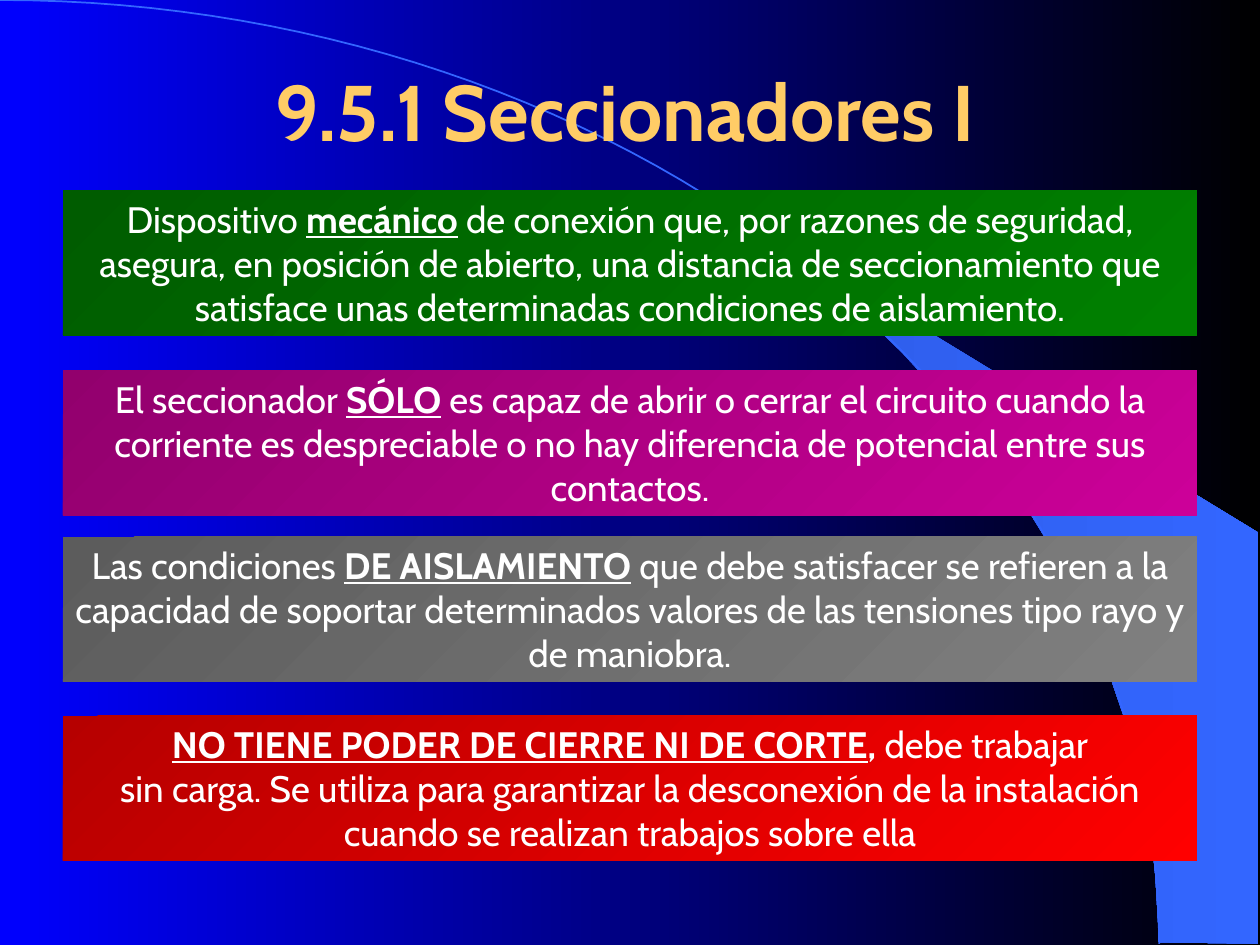
import math
from pptx import Presentation
from pptx.dml.color import RGBColor
from pptx.enum.text import MSO_ANCHOR, MSO_AUTO_SIZE, PP_ALIGN
from pptx.enum.shapes import MSO_SHAPE
from pptx.util import Inches, Pt

RECTANGLE = MSO_SHAPE.RECTANGLE
CENTER = PP_ALIGN.CENTER
TOP, MIDDLE = MSO_ANCHOR.TOP, MSO_ANCHOR.MIDDLE
FIT_SHAPE, NO_FIT = MSO_AUTO_SIZE.SHAPE_TO_FIT_TEXT, MSO_AUTO_SIZE.NONE

FONT = "Cabin"
WHITE = RGBColor(0xFF, 0xFF, 0xFF)
BLACK = RGBColor(0x00, 0x00, 0x00)
BLUE = RGBColor(0x00, 0x00, 0xFF)
SKY = RGBColor(0x33, 0x66, 0xFF)
SKY_DARK = RGBColor(0x2E, 0x5D, 0xE7)
GOLD = RGBColor(0xFF, 0xCC, 0x66)
GREEN_DARK, GREEN = RGBColor(0x00, 0x5C, 0x00), RGBColor(0x00, 0x80, 0x00)
PURPLE_DARK, PURPLE = RGBColor(0x92, 0x00, 0x6D), RGBColor(0xCC, 0x00, 0x99)
GRAY_DARK, GRAY = RGBColor(0x5C, 0x5C, 0x5C), RGBColor(0x80, 0x80, 0x80)
RED_DARK, RED = RGBColor(0xB6, 0x00, 0x00), RGBColor(0xFF, 0x00, 0x00)


def set_gradient(fill, start, end, angle=0):
    fill.gradient()
    fill.gradient_angle = angle
    for stop, color in zip(fill.gradient_stops, (start, end)):
        stop.color.rgb = color


def add_outline(shapes, points, close):
    pts = [(Inches(x), Inches(y)) for x, y in points]
    builder = shapes.build_freeform(*pts[0])
    builder.add_line_segments(pts[1:], close=close)
    sp = builder.convert_to_shape()
    sp.shadow.inherit = False
    return sp


prs = Presentation()
prs.slide_width, prs.slide_height = Inches(10), Inches(7.5)
s = prs.slides.add_slide(prs.slide_layouts[5])
set_gradient(s.background.fill, BLUE, BLACK)

# Blue band in the lower right corner
BAND = [
    (9.2, 7.48), (9.99, 7.49), (9.99, 4.23), (5.89, 1.73), (6.24, 1.99),
    (6.53, 2.22), (6.85, 2.5), (7.16, 2.8), (7.62, 3.3), (8.03, 3.84),
    (8.32, 4.31), (8.58, 4.79), (8.78, 5.28), (8.93, 5.72), (9.03, 6.09),
    (9.13, 6.56), (9.17, 6.96),
]
band = add_outline(s.shapes, BAND, close=True)
set_gradient(band.fill, SKY_DARK, SKY)
band.line.fill.background()

# Thin quarter-ellipse arc
ARC_W, ARC_H, STEPS = 9.2, 7.49, 60
angles = [math.pi / 2 * i / STEPS for i in range(STEPS + 1)]
arc = add_outline(
    s.shapes,
    [(ARC_W * math.sin(a), ARC_H * (1 - math.cos(a))) for a in angles],
    close=False)
arc.fill.background()
arc.line.color.rgb = SKY
arc.line.width = Pt(1)

# Title, in front of the decoration
title = s.shapes.title
s.shapes._spTree.append(title._element)
title.left, title.top = Inches(0.17), Inches(0.25)
title.width, title.height = Inches(9.58), Inches(1.25)
tf = title.text_frame
tf.text = "9.5.1 Seccionadores I"
tf.vertical_anchor = MIDDLE
tf.auto_size = NO_FIT
p = tf.paragraphs[0]
p.alignment = CENTER
font = p.runs[0].font
font.name, font.size, font.bold = FONT, Pt(45), True
font.color.rgb = GOLD

# Statement boxes: top, gradient, paragraphs of (text, bold, underline)
BOXES = [
    (1.51, GREEN_DARK, GREEN, [[
        ("Dispositivo ", False, False),
        ("mecánico", True, True),
        (" de conexión que, por razones de seguridad, asegura, en posición "
         "de abierto, una distancia de seccionamiento que satisface unas "
         "determinadas condiciones de aislamiento.", False, False)]]),
    (2.94, PURPLE_DARK, PURPLE, [[
        ("El seccionador ", False, False),
        ("SÓLO", True, True),
        (" es capaz de abrir o cerrar el circuito cuando la corriente es "
         "despreciable o no hay diferencia de potencial entre sus "
         "contactos.", False, False)]]),
    (4.26, GRAY_DARK, GRAY, [[
        ("Las condiciones ", False, False),
        ("DE AISLAMIENTO", True, True),
        (" que debe satisfacer se refieren a la capacidad de soportar "
         "determinados valores de las tensiones tipo rayo y de maniobra.",
         False, False)]]),
    (5.68, RED_DARK, RED, [
        [("NO TIENE PODER DE CIERRE NI DE CORTE", True, True),
         (", ", True, False),
         ("debe trabajar", False, False)],
        [("sin carga. Se utiliza para garantizar la desconexión de la "
          "instalación cuando se realizan trabajos sobre ella",
          False, False)]]),
]
for top, dark, light, paragraphs in BOXES:
    box = s.shapes.add_shape(
        RECTANGLE, Inches(0.5), Inches(top), Inches(9), Inches(1.15))
    box.shadow.inherit = False
    set_gradient(box.fill, dark, light, angle=315)
    box.line.fill.background()
    tf = box.text_frame
    tf.word_wrap = True
    tf.auto_size = FIT_SHAPE
    tf.vertical_anchor = TOP
    for i, runs in enumerate(paragraphs):
        p = tf.add_paragraph() if i else tf.paragraphs[0]
        p.alignment = CENTER
        for text, bold, underline in runs:
            r = p.add_run()
            r.text = text
            r.font.name, r.font.size = FONT, Pt(21)
            r.font.bold, r.font.underline = bold, underline
            r.font.color.rgb = WHITE

prs.save("out.pptx")
